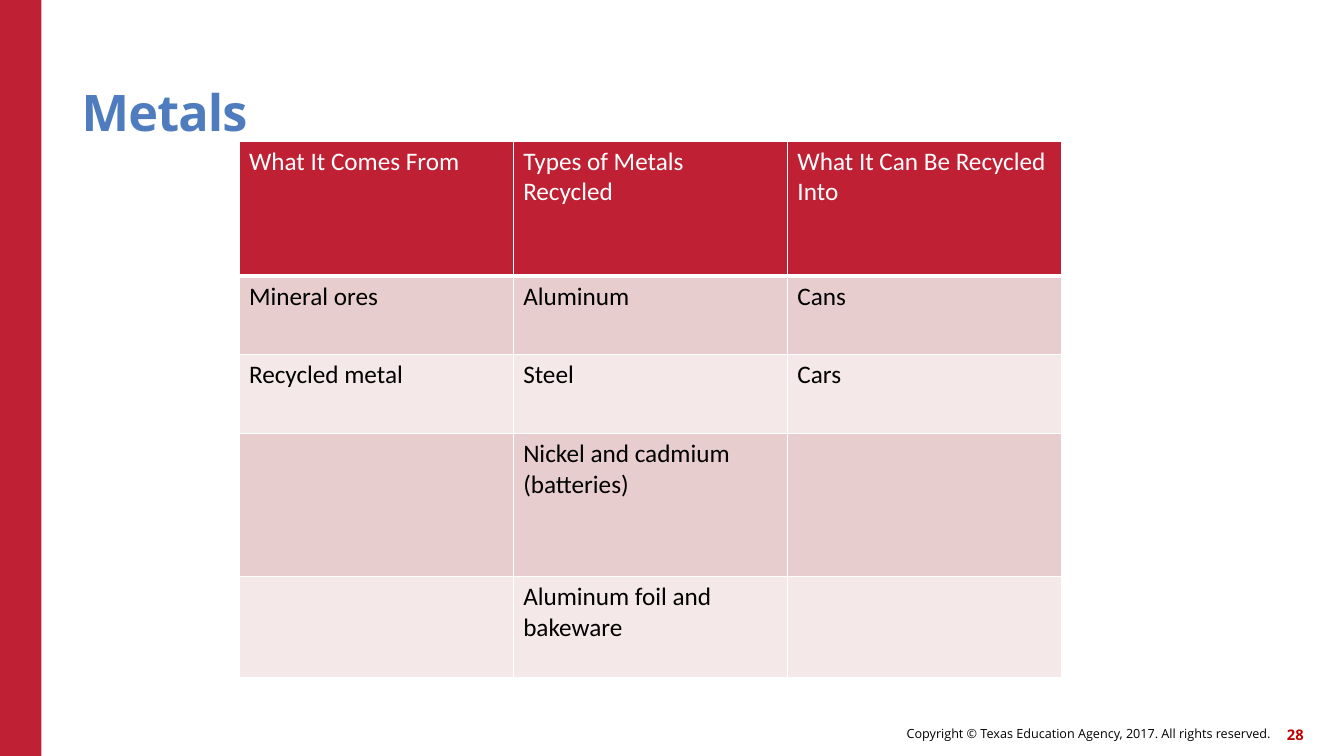
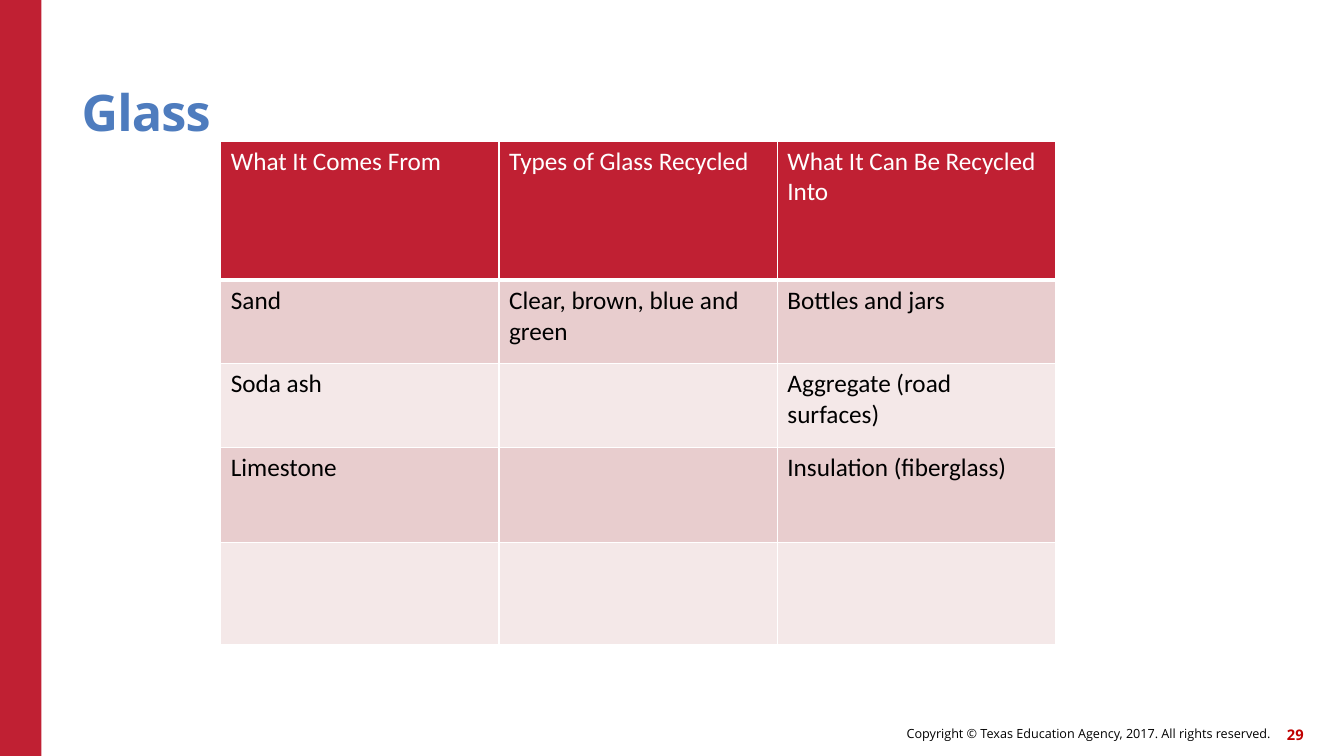
import pptx
import pptx.dml.color
import pptx.enum.shapes
import pptx.enum.text
import pptx.util
from lxml import etree
from pptx.oxml.ns import qn

Inches = pptx.util.Inches
Pt = pptx.util.Pt
Align = pptx.enum.text.PP_ALIGN
Anchor = pptx.enum.text.MSO_ANCHOR

RED, BLUE, WHITE, BLACK = "C02033", "4E7CBE", "FFFFFF", "000000"
NUMBER_RED = "C00000"
BANDS = ["E8CDCE", "F4E8E8"]
HEAD_FONT, BODY_FONT = "Open Sans", "Calibri"
COPYRIGHT = "Copyright © Texas Education Agency, 2017. All rights reserved."
FIRST_PAGE = 28
TABLE_TOP = 1.4

SLIDES = [
    {
        "title": "Metals",
        "left": 2.37,
        "column": 2.72,
        "heights": [1.34, 0.78, 0.78, 1.42, 1],
        "rows": [
            ["What It Comes From", "Types of Metals Recycled", "What It Can Be Recycled Into"],
            ["Mineral ores", "Aluminum", "Cans"],
            ["Recycled metal", "Steel", "Cars"],
            ["", "Nickel and cadmium (batteries)", ""],
            ["", "Aluminum foil and bakeware", ""],
        ],
    },
    {
        "title": "Glass",
        "left": 2.19,
        "column": 2.76,
        "heights": [1.38, 0.83, 0.83, 0.94, 1.02],
        "rows": [
            ["What It Comes From", "Types of Glass Recycled", "What It Can Be Recycled Into"],
            ["Sand", "Clear, brown, blue and green", "Bottles and jars"],
            ["Soda ash", "", "Aggregate (road surfaces)"],
            ["Limestone", "", "Insulation (fiberglass)"],
            ["", "", ""],
        ],
    },
]


def color(code):
    return pptx.dml.color.RGBColor.from_string(code)


def paint(shape, code):
    shape.fill.solid()
    shape.fill.fore_color.rgb = color(code)


def write(para, text, size, face, code, bold=False):
    run = para.add_run()
    run.text = text
    font = run.font
    font.size, font.name, font.bold = Pt(size), face, bold
    font.color.rgb = color(code)
    return run


def frame(shape, anchor, align):
    """Strip the margins of a text shape and return its first paragraph."""
    box = shape.text_frame
    box.margin_left = box.margin_right = box.margin_top = box.margin_bottom = 0
    box.word_wrap = True
    box.auto_size = pptx.enum.text.MSO_AUTO_SIZE.NONE
    box.vertical_anchor = anchor
    para = box.paragraphs[0]
    para.alignment = align
    return para


def add_band(slide):
    band = slide.shapes.add_shape(
        pptx.enum.shapes.MSO_SHAPE.RECTANGLE, 0, 0, Inches(0.41), Inches(7.5))
    band.shadow.inherit = False
    paint(band, RED)
    band.line.fill.background()


def add_footer(slide, page):
    note = slide.shapes.add_textbox(Inches(6.14), Inches(7.12), Inches(6.46), Inches(0.32))
    write(frame(note, Anchor.MIDDLE, Align.RIGHT), COPYRIGHT, 9, HEAD_FONT, BLACK)
    number = slide.shapes.add_textbox(Inches(12.51), Inches(7.13), Inches(0.42), Inches(0.32))
    write(frame(number, Anchor.MIDDLE, Align.RIGHT), str(page), 10.5, HEAD_FONT, NUMBER_RED, True)


def set_title(slide, text):
    title = slide.shapes.title
    title.left, title.top = Inches(0.81), Inches(0.45)
    title.width, title.height = Inches(11), Inches(0.96)
    para = frame(title, Anchor.BOTTOM, Align.LEFT)
    para.line_spacing = 0.9
    run = write(para, text, 36, HEAD_FONT, BLUE, True)
    run._r.get_or_add_rPr().set("spc", "-60")


def add_borders(cell, bottom):
    props = cell._tc.get_or_add_tcPr()
    for side, width in (("L", 1), ("R", 1), ("T", 1), ("B", bottom)):
        line = etree.SubElement(props, qn("a:ln" + side), w=str(Pt(width)))
        fill = etree.SubElement(line, qn("a:solidFill"))
        etree.SubElement(fill, qn("a:srgbClr"), val=WHITE)


def add_grid(slide, data):
    rows, heights = data["rows"], data["heights"]
    count = len(rows[0])
    table = slide.shapes.add_table(
        len(rows), count, Inches(data["left"]), Inches(TABLE_TOP),
        Inches(data["column"] * count), Inches(sum(heights))).table
    for column in table.columns:
        column.width = Inches(data["column"])
    for r, texts in enumerate(rows):
        table.rows[r].height = Inches(heights[r])
        head = r == 0
        for c, text in enumerate(texts):
            cell = table.cell(r, c)
            add_borders(cell, 3 if head else 1)
            paint(cell, RED if head else BANDS[(r - 1) % 2])
            if text:
                write(cell.text_frame.paragraphs[0], text, 18, BODY_FONT,
                      WHITE if head else BLACK)


def main():
    deck = pptx.Presentation()
    deck.slide_width, deck.slide_height = Inches(13.33), Inches(7.5)
    layout = deck.slide_layouts.get_by_name("Title Only")
    for page, data in enumerate(SLIDES, FIRST_PAGE):
        slide = deck.slides.add_slide(layout)
        add_band(slide)
        add_footer(slide, page)
        set_title(slide, data["title"])
        add_grid(slide, data)
    deck.save("out.pptx")


if __name__ == "__main__":
    main()
